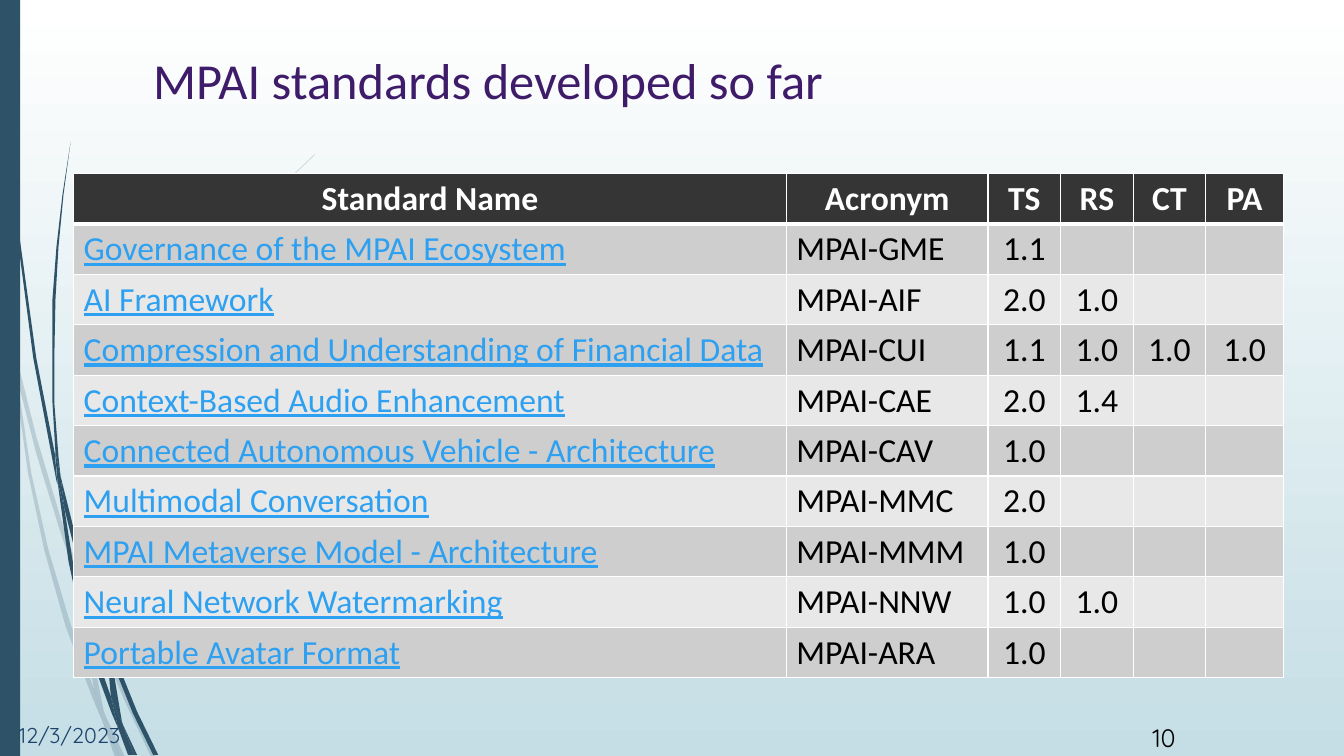
from lxml.etree import SubElement as Sub
from pptx import Presentation
from pptx.dml.color import RGBColor as RGB
from pptx.enum.shapes import MSO_SHAPE as Shape
from pptx.enum.text import PP_ALIGN as Align
from pptx.oxml.ns import qn
from pptx.util import Inches, Pt

WHITE = RGB(0xFF, 0xFF, 0xFF)
BLACK = RGB(0, 0, 0)
MIST = RGB(0xC5, 0xDE, 0xE5)
TEAL = RGB(0x2E, 0x53, 0x69)
PLUM = RGB(0x3F, 0x1C, 0x6A)
NAVY = RGB(0x1C, 0x43, 0x6D)
LINK = RGB(0x2D, 0xA0, 0xF1)
DARK = RGB(0x35, 0x35, 0x35)
BANDS = RGB(0xCE, 0xCE, 0xCE), RGB(0xE8, 0xE8, 0xE8)

UNIT = Inches(0.01)  # the slide is a grid of 1333 by 750 units
WIDE, HIGH = 1333, 750

COLS = 707, 200, 72, 72, 72, 77
ROW = 50
HEAD = "Standard Name", "Acronym", "TS", "RS", "CT", "PA"
ROWS = [
    ("Governance of the MPAI Ecosystem", "MPAI-GME", "1.1"),
    ("AI Framework", "MPAI-AIF", "2.0", "1.0"),
    ("Compression and Understanding of Financial Data", "MPAI-CUI",
     "1.1", "1.0", "1.0", "1.0"),
    ("Context-Based Audio Enhancement", "MPAI-CAE", "2.0", "1.4"),
    ("Connected Autonomous Vehicle - Architecture", "MPAI-CAV", "1.0"),
    ("Multimodal Conversation", "MPAI-MMC", "2.0"),
    ("MPAI Metaverse Model - Architecture", "MPAI-MMM", "1.0"),
    ("Neural Network Watermarking", "MPAI-NNW", "1.0", "1.0"),
    ("Portable Avatar Format", "MPAI-ARA", "1.0"),
]

# Outlines of the grass blades, as points on the grid
PALE = [
    [(11, 350), (9, 322), (0, 282), (0, 299), (10, 344)],
    [(58, 522), (84, 599), (85, 586), (62, 520), (36, 433), (14, 345),
     (17, 376), (36, 450)],
    [(92, 607), (88, 596), (88, 610), (123, 694), (150, 751), (155, 751),
     (127, 692)],
    [(119, 751), (124, 751), (105, 711)],
    [(93, 683), (70, 619), (48, 545), (31, 469), (17, 376), (11, 350),
     (28, 470), (44, 546), (65, 621), (92, 693), (101, 714), (99, 707)],
    [(84, 599), (87, 646), (93, 683), (96, 692), (105, 711), (103, 706),
     (91, 646), (88, 610), (88, 608)],
    [(88, 584), (95, 522), (110, 462), (132, 405), (160, 349), (193, 296),
     (229, 245), (268, 198), (290, 175), (312, 154), (312, 153), (289, 175),
     (268, 197), (228, 244), (191, 295), (158, 348), (130, 403), (107, 461),
     (91, 521), (85, 584), (85, 586), (88, 596)],
    [(101, 714), (114, 751), (119, 751)],
    [(88, 608), (88, 610), (88, 596), (85, 586), (84, 599)],
    [(96, 692), (93, 683), (99, 707), (101, 714), (119, 751), (105, 711)],
]
DEEP = [
    [(7, 110), (17, 233), (33, 355), (56, 477), (57, 481), (55, 457),
     (55, 453), (36, 355), (19, 232), (8, 109), (5, 48), (4, 0), (3, 0),
     (4, 48)],
    [(88, 592), (106, 645), (106, 633), (106, 631), (93, 590), (75, 532),
     (60, 472), (64, 505), (75, 549)],
    [(113, 649), (110, 641), (111, 656), (132, 708), (152, 749), (157, 749),
     (136, 706)],
    [(110, 691), (98, 657), (83, 607), (72, 556), (64, 505), (57, 477),
     (68, 557), (79, 608), (93, 659), (111, 708), (117, 722), (116, 717)],
    [(60, 472), (58, 453), (54, 401), (54, 349), (55, 297), (58, 245),
     (63, 193), (70, 141), (62, 193), (56, 245), (52, 297), (52, 349),
     (52, 399), (55, 449)],
    [(133, 749), (136, 749), (122, 719)],
    [(57, 477), (64, 505), (60, 472), (55, 449), (55, 453)],
    [(111, 633), (115, 592), (125, 552), (140, 513), (158, 476), (180, 440),
     (205, 406), (231, 374), (245, 359), (261, 344), (260, 344), (245, 358),
     (231, 373), (204, 405), (179, 439), (156, 474), (137, 511), (122, 551),
     (111, 591), (106, 631), (110, 641)],
    [(117, 722), (127, 749), (131, 749)],
    [(106, 645), (110, 691), (116, 706), (122, 719), (121, 716), (111, 656),
     (109, 651)],
    [(106, 645), (109, 651), (111, 656), (110, 641), (106, 631)],
    [(116, 706), (110, 691), (116, 717), (117, 722), (130, 749), (133, 749),
     (122, 719)],
]


def span(*units):
    return [UNIT * n for n in units]


def paint(shape, color, alpha=100):
    shape.shadow.inherit = False
    shape.fill.solid()
    shape.fill.fore_color.rgb = color
    shape.line.fill.background()
    if alpha < 100:
        tint = shape.fill._xPr.find(".//" + qn("a:srgbClr"))
        Sub(tint, qn("a:alpha"), val=str(alpha * 1000))


def blade(slide, points, alpha):
    form = slide.shapes.build_freeform(*points[0], scale=UNIT)
    form.add_line_segments(points[1:], close=True)
    paint(form.convert_to_shape(), TEAL, alpha)


def style(para, face, size, color):
    font = para.font
    font.name, font.size = face, Pt(size)
    font.color.rgb = color


def label(slide, text, box, face, size, color):
    frame = slide.shapes.add_textbox(*span(*box)).text_frame
    frame.word_wrap = True
    frame.text = text
    style(frame.paragraphs[0], face, size, color)


def edge(cell, side, width):
    line = Sub(cell._tc.get_or_add_tcPr(), qn("a:ln" + side), w=str(Pt(width)))
    fill = Sub(line, qn("a:solidFill"))
    Sub(fill, qn("a:srgbClr"), val=str(WHITE))


def fill_cell(cell, text, row, col):
    head = row == 0
    for side in "LRTB":
        thick = (side, row) in (("B", 0), ("T", 1))
        edge(cell, side, 3 if thick else 1)
    cell.fill.solid()
    cell.fill.fore_color.rgb = DARK if head else BANDS[(row - 1) % 2]
    cell.text = text
    para = cell.text_frame.paragraphs[0]
    link = col == 0 and not head
    style(para, "Calibri", 24, WHITE if head else LINK if link else BLACK)
    para.font.bold = head
    para.font.underline = link
    para.alignment = Align.CENTER if head or col > 1 else Align.LEFT


def grid(slide, left, top):
    lines = [HEAD] + ROWS
    box = span(left, top, sum(COLS), ROW * len(lines))
    table = slide.shapes.add_table(len(lines), len(COLS), *box).table
    for col, width in zip(table.columns, COLS):
        col.width = UNIT * width
    for row, line in enumerate(lines):
        for col in range(len(COLS)):
            text = line[col] if col < len(line) else ""
            fill_cell(table.cell(row, col), text, row, col)


def backdrop(slide):
    fill = slide.background.fill
    fill.gradient()
    fill.gradient_angle = 270
    for stop, color in zip(fill.gradient_stops, (WHITE, MIST)):
        stop.color.rgb = color
    for blades, alpha in ((PALE, 20), (DEEP, 100)):
        for points in blades:
            blade(slide, points, alpha)
    bar = slide.shapes.add_shape(Shape.RECTANGLE, *span(0, 0, 20, HIGH))
    paint(bar, TEAL)


def main():
    deck = Presentation()
    deck.slide_width, deck.slide_height = span(WIDE, HIGH)
    slide = deck.slides.add_slide(deck.slide_layouts[6])
    backdrop(slide)
    label(slide, "MPAI standards developed so far", (142, 44, 1116, 128),
          "Calibri", 36, PLUM)
    grid(slide, 73, 172)
    label(slide, "12/3/2023", (9, 711, 124, 41), "Quicksand", 15.3, NAVY)
    label(slide, "10", (1133, 712, 68, 40), "Quicksand", 18, BLACK)
    deck.save("out.pptx")


if __name__ == "__main__":
    main()
